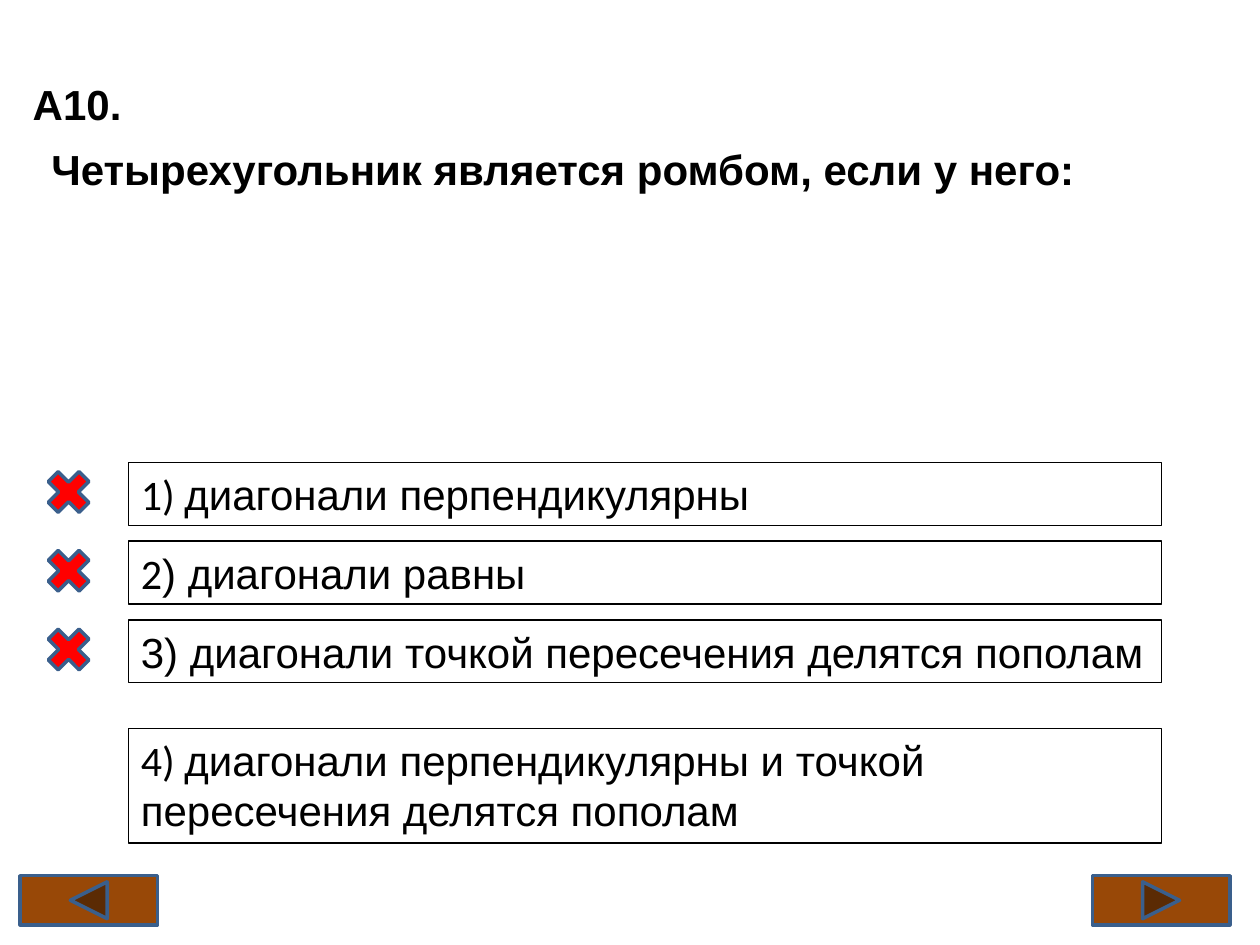
"""Build a quiz slide on the properties of a rhombus."""
from dataclasses import dataclass

from pptx import Presentation
from pptx.dml.color import RGBColor
from pptx.enum.shapes import MSO_SHAPE
from pptx.enum.text import MSO_ANCHOR, PP_ALIGN
from pptx.util import Inches, Pt

RECTANGLE = MSO_SHAPE.RECTANGLE
CROSS = MSO_SHAPE.MATH_MULTIPLY
BACK = MSO_SHAPE.ACTION_BUTTON_BACK_OR_PREVIOUS
FORWARD = MSO_SHAPE.ACTION_BUTTON_FORWARD_OR_NEXT
MIDDLE, TOP = MSO_ANCHOR.MIDDLE, MSO_ANCHOR.TOP
LEFT, JUSTIFY = PP_ALIGN.LEFT, PP_ALIGN.JUSTIFY


@dataclass(frozen=True)
class Theme:
    text: RGBColor = RGBColor(0, 0, 0)
    outline: RGBColor = RGBColor(0x3A, 0x5F, 0x8C)
    wrong: RGBColor = RGBColor(0xFF, 0, 0)
    button: RGBColor = RGBColor(0x98, 0x48, 0x07)
    font: str = "Arial"
    number_font: str = "Calibri"
    size: Pt = Pt(24)
    thin: Pt = Pt(0.75)
    thick: Pt = Pt(2)


THEME = Theme()
TITLE = "А10."
QUESTION = "Четырехугольник является ромбом, если у него:"
ANSWERS = [
    ("1) ", "диагонали перпендикулярны", True),
    ("2", ") диагонали равны", True),
    ("", "3) диагонали точкой пересечения делятся пополам", True),
    ("4) ", "диагонали перпендикулярны и точкой пересечения делятся пополам", False),
]
BUTTONS = [(BACK, 0.16), (FORWARD, 8.67)]
FIRST_TOP, ROW_STEP, CORRECT_TOP = 3.67, 0.625, 5.78
ROW_HEIGHT, CORRECT_HEIGHT = 0.5, 0.91


def write(shape, text, number="", bold=False, alignment=LEFT, anchor=TOP):
    frame = shape.text_frame
    frame.word_wrap = True
    frame.vertical_anchor = anchor
    paragraph = frame.paragraphs[0]
    paragraph.alignment = alignment
    font = paragraph.font
    font.name, font.size, font.bold = THEME.font, THEME.size, bold
    font.color.rgb = THEME.text
    if number:
        run = paragraph.add_run()
        run.text = number
        run.font.name = THEME.number_font
    paragraph.add_run().text = text


def add_shape(slide, kind, box, line, width, fill=None):
    shape = slide.shapes.add_shape(kind, *map(Inches, box))
    shape.shadow.inherit = False
    if fill is None:
        shape.fill.background()
    else:
        shape.fill.solid()
        shape.fill.fore_color.rgb = fill
    shape.line.color.rgb = line
    shape.line.width = width
    return shape


def main():
    presentation = Presentation()
    presentation.slide_width, presentation.slide_height = Inches(10), Inches(7.5)
    slide = presentation.slides.add_slide(presentation.slide_layouts[5])

    title = slide.shapes.title
    title.left, title.top = Inches(0.16), Inches(0.31)
    title.width, title.height = Inches(0.91), Inches(1.03)
    write(title, TITLE, bold=True, alignment=JUSTIFY, anchor=MIDDLE)

    for index, (number, text, is_wrong) in enumerate(ANSWERS):
        top = FIRST_TOP + index * ROW_STEP if is_wrong else CORRECT_TOP
        height = ROW_HEIGHT if is_wrong else CORRECT_HEIGHT
        answer = add_shape(slide, RECTANGLE, (1.02, top, 8.2, height), THEME.text, THEME.thin)
        write(answer, text, number)
        if is_wrong:
            add_shape(slide, CROSS, (0.31, top, 0.47, 0.47), THEME.outline, THEME.thick, THEME.wrong)

    for kind, left in BUTTONS:
        add_shape(slide, kind, (left, 6.95, 1.09, 0.39), THEME.outline, THEME.thick, THEME.button)

    question = slide.shapes.add_textbox(Inches(0.31), Inches(1.09), Inches(8.6), Inches(0.5))
    write(question, QUESTION, bold=True)
    presentation.save("out.pptx")


if __name__ == "__main__":
    main()
